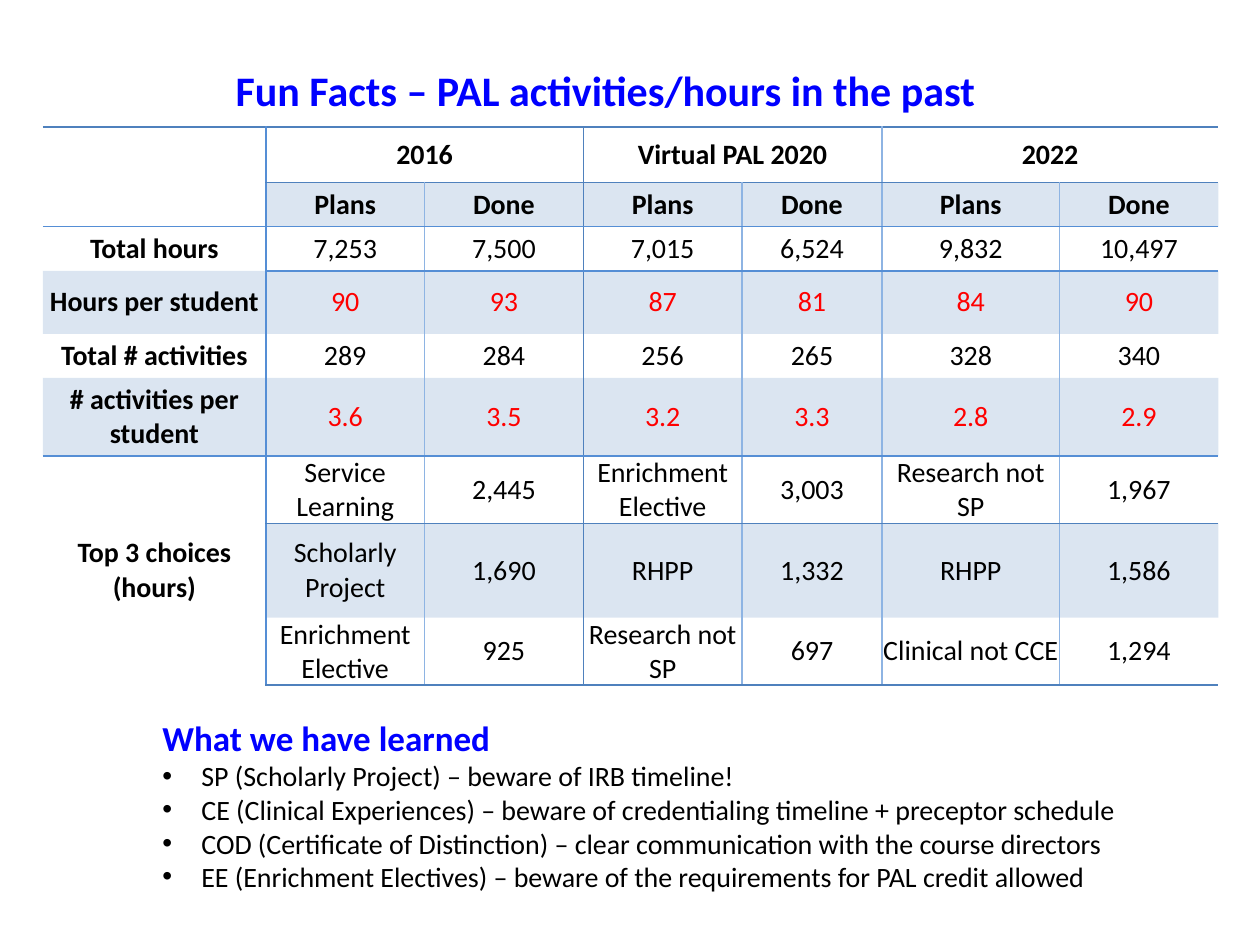
from dataclasses import dataclass

from lxml import etree
from pptx import Presentation
from pptx.dml.color import RGBColor
from pptx.enum.text import MSO_ANCHOR, MSO_AUTO_SIZE, PP_ALIGN
from pptx.oxml.ns import qn
from pptx.slide import Slide
from pptx.table import Table, _Cell
from pptx.text.text import TextFrame, _Paragraph
from pptx.util import Inches, Pt

LEFT, CENTER = PP_ALIGN.LEFT, PP_ALIGN.CENTER
TOP, MIDDLE = MSO_ANCHOR.TOP, MSO_ANCHOR.MIDDLE
FIT_SHAPE = MSO_AUTO_SIZE.SHAPE_TO_FIT_TEXT


@dataclass(frozen=True)
class Theme:
    font: str = "Calibri"
    title_size: int = 24
    heading_size: int = 20
    body_size: int = 16
    heading: str = "0000FF"
    text: str = "000000"
    highlight: str = "FF0000"
    accent: str = "4F81BD"
    medium_line: str = "558ED5"
    light_line: str = "8EB4E3"
    band_opacity: int = 20


@dataclass(frozen=True)
class Rule:
    """A horizontal table line, drawn from first_column to the right edge."""
    color: str
    first_column: int = 0


THEME = Theme()
NO_STYLE_ID = "{2D5ABB26-0587-4C30-8999-92F81FD0307C}"
TITLE = "Fun Facts – PAL activities/hours in the past"
COLUMN_WIDTHS = [1.77, 1.26, 1.26, 1.26, 1.11, 1.41, 1.26]
ROW_HEIGHTS = [0.44, 0.35, 0.35, 0.5, 0.35, 0.62, 0.51, 0.75, 0.51]
ROWS = [
    ["", "2016", "", "Virtual PAL 2020", "", "2022", ""],
    ["", "Plans", "Done", "Plans", "Done", "Plans", "Done"],
    ["Total hours", "7,253", "7,500", "7,015", "6,524", "9,832", "10,497"],
    ["Hours per student", "90", "93", "87", "81", "84", "90"],
    ["Total # activities", "289", "284", "256", "265", "328", "340"],
    ["# activities per student", "3.6", "3.5", "3.2", "3.3", "2.8", "2.9"],
    ["Top 3 choices (hours)", "Service Learning", "2,445", "Enrichment Elective",
     "3,003", "Research not SP", "1,967"],
    ["", "Scholarly Project", "1,690", "RHPP", "1,332", "RHPP", "1,586"],
    ["", "Enrichment Elective", "925", "Research not SP", "697",
     "Clinical not CCE", "1,294"],
]
MERGES = [((0, 0), (1, 0)), ((6, 0), (8, 0))] + [
    ((0, column), (0, column + 1)) for column in (1, 3, 5)]
HEADER_ROWS = (0, 1)
HIGHLIGHT_ROWS = (3, 5)
GROUP_EDGES = (1, 3, 5)
HORIZONTAL_RULES = {
    0: Rule(THEME.accent),
    1: Rule(THEME.accent, 1),
    2: Rule(THEME.medium_line),
    3: Rule(THEME.medium_line, 1),
    6: Rule(THEME.medium_line),
    7: Rule(THEME.accent, 1),
    9: Rule(THEME.accent),
}
VERTICAL_COLORS = {1: THEME.medium_line, 2: THEME.light_line, 3: THEME.accent,
                   4: THEME.light_line, 5: THEME.light_line, 6: THEME.light_line}
LESSONS_HEADING = "What we have learned"
LESSONS = [
    "SP (Scholarly Project) – beware of IRB timeline!",
    "CE (Clinical Experiences) – beware of credentialing timeline + preceptor schedule",
    "COD (Certificate of Distinction) – clear communication with the course directors",
    "EE (Enrichment Electives) – beware of the requirements for PAL credit allowed",
]


def write(paragraph: _Paragraph, text: str, size: int, color: str,
          bold: bool, alignment: PP_ALIGN = LEFT) -> None:
    paragraph.text = text
    paragraph.alignment = alignment
    for run in paragraph.runs:
        run.font.name = THEME.font
        run.font.size = Pt(size)
        run.font.bold = bold
        run.font.color.rgb = RGBColor.from_string(color)


def fit_to_text(text_frame: TextFrame) -> None:
    text_frame.word_wrap = False
    text_frame.auto_size = FIT_SHAPE
    text_frame.vertical_anchor = TOP


def add_bullet(paragraph: _Paragraph) -> None:
    properties = paragraph._p.get_or_add_pPr()
    properties.set("marL", str(Inches(0.31)))
    properties.set("indent", str(Inches(-0.31)))
    etree.SubElement(properties, qn("a:buFont"), typeface="Arial")
    etree.SubElement(properties, qn("a:buChar"), char="•")


def draw_border(cell: _Cell, side: str, color: str | None) -> None:
    """Draw one side (L, R, T or B) of a cell, or clear it without a color."""
    properties = cell._tc.get_or_add_tcPr()
    line = etree.SubElement(properties, qn(f"a:ln{side}"), w=str(Pt(1)))
    if color is None:
        etree.SubElement(line, qn("a:noFill"))
    else:
        fill = etree.SubElement(line, qn("a:solidFill"))
        etree.SubElement(fill, qn("a:srgbClr"), val=color)


def vertical_color(row: int, edge: int) -> str | None:
    if row == 0 and edge not in GROUP_EDGES:
        return None
    return VERTICAL_COLORS.get(edge)


def horizontal_color(edge: int, column: int) -> str | None:
    rule = HORIZONTAL_RULES.get(edge)
    return rule.color if rule and column >= rule.first_column else None


def fill_cell(cell: _Cell, shaded: bool) -> None:
    if not shaded:
        cell.fill.background()
        return
    cell.fill.solid()
    cell.fill.fore_color.rgb = RGBColor.from_string(THEME.accent)
    color = cell._tc.tcPr.find(qn("a:solidFill")).find(qn("a:srgbClr"))
    etree.SubElement(color, qn("a:alpha"), val=str(THEME.band_opacity * 1000))


def format_cell(table: Table, row: int, column: int) -> None:
    cell = table.cell(row, column)
    cell.margin_left = cell.margin_right = cell.margin_top = cell.margin_bottom = 0
    cell.vertical_anchor = MIDDLE
    draw_border(cell, "L", vertical_color(row, column))
    draw_border(cell, "R", vertical_color(row, column + 1))
    draw_border(cell, "T", horizontal_color(row, column))
    draw_border(cell, "B", horizontal_color(row + 1, column))
    text = ROWS[row][column]
    fill_cell(cell, shaded=row % 2 == 1 and bool(text))
    highlighted = row in HIGHLIGHT_ROWS and column > 0
    write(cell.text_frame.paragraphs[0], text, THEME.body_size,
          THEME.highlight if highlighted else THEME.text,
          row in HEADER_ROWS or column == 0, CENTER)


def add_activity_table(slide: Slide) -> None:
    frame = slide.shapes.add_table(
        len(ROWS), len(COLUMN_WIDTHS), Inches(0.34), Inches(1.01),
        Inches(sum(COLUMN_WIDTHS)), Inches(sum(ROW_HEIGHTS)))
    table = frame.table
    table.first_row = table.horz_banding = False
    table._tbl.tblPr.find(qn("a:tableStyleId")).text = NO_STYLE_ID
    for column, width in zip(table.columns, COLUMN_WIDTHS):
        column.width = Inches(width)
    for row, height in zip(table.rows, ROW_HEIGHTS):
        row.height = Inches(height)
    for first, last in MERGES:
        table.cell(*first).merge(table.cell(*last))
    for row in range(len(ROWS)):
        for column in range(len(COLUMN_WIDTHS)):
            format_cell(table, row, column)


def add_title(slide: Slide) -> None:
    title = slide.shapes.title
    title.left, title.top = Inches(1.77), Inches(0.46)
    title.width, title.height = Inches(6.18), Inches(0.5)
    fit_to_text(title.text_frame)
    write(title.text_frame.paragraphs[0], TITLE, THEME.title_size, THEME.heading, True)


def add_lessons(slide: Slide) -> None:
    box = slide.shapes.add_textbox(Inches(1.19), Inches(5.64), Inches(8.18), Inches(1.51))
    text_frame = box.text_frame
    fit_to_text(text_frame)
    write(text_frame.paragraphs[0], LESSONS_HEADING, THEME.heading_size,
          THEME.heading, True)
    for lesson in LESSONS:
        paragraph = text_frame.add_paragraph()
        write(paragraph, lesson, THEME.body_size, THEME.text, False)
        add_bullet(paragraph)


def main() -> None:
    presentation = Presentation()
    presentation.slide_width, presentation.slide_height = Inches(10), Inches(7.5)
    slide = presentation.slides.add_slide(presentation.slide_layouts[5])
    add_title(slide)
    add_activity_table(slide)
    add_lessons(slide)
    presentation.save("out.pptx")


if __name__ == "__main__":
    main()
